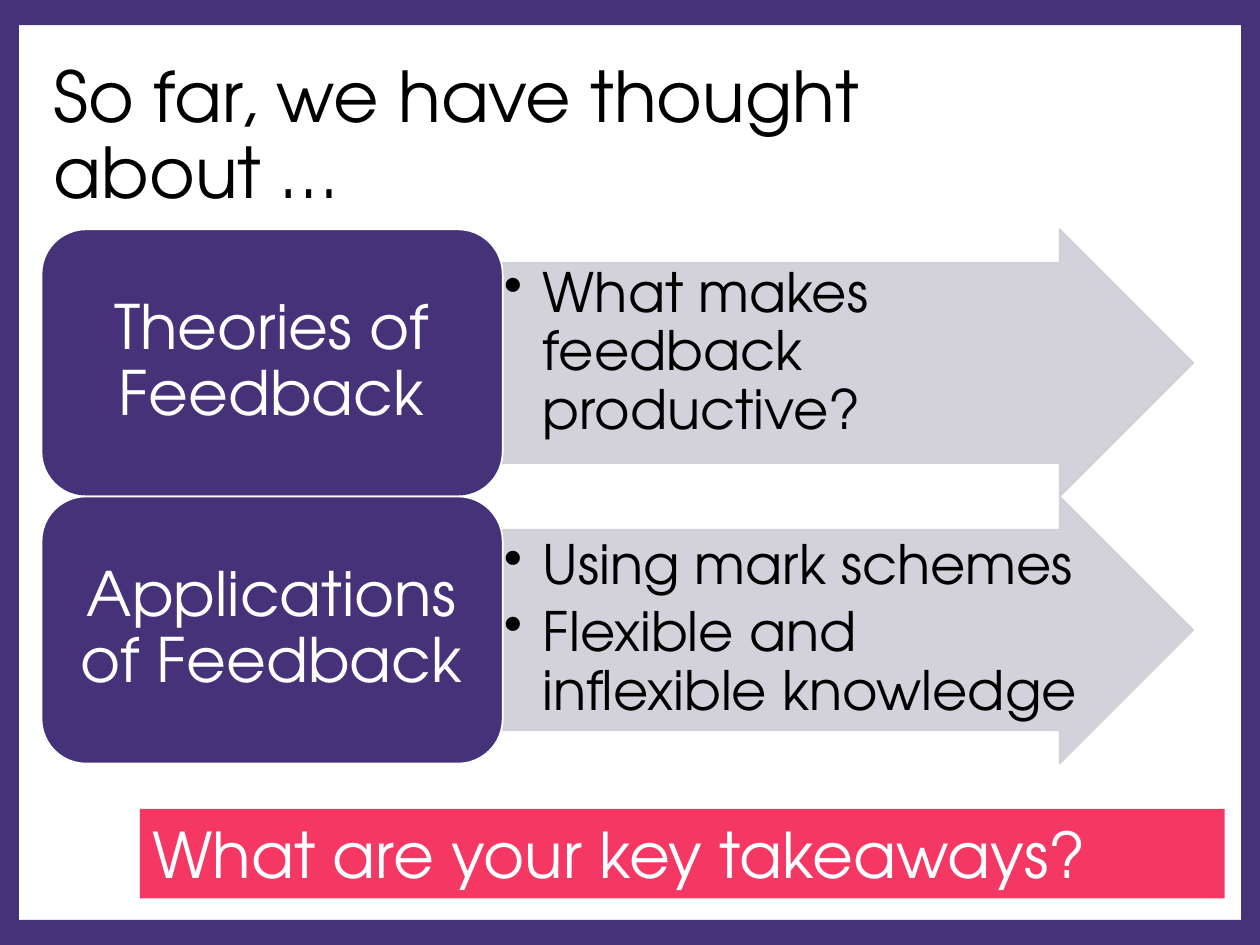
from dataclasses import dataclass
from typing import Any

from lxml import etree
from pptx import Presentation
from pptx.dml.color import RGBColor
from pptx.enum.shapes import MSO_SHAPE
from pptx.enum.text import MSO_ANCHOR, MSO_AUTO_SIZE, PP_ALIGN
from pptx.oxml.ns import qn
from pptx.util import Inches, Pt

RECT, ROUND, ARROW = MSO_SHAPE.RECTANGLE, MSO_SHAPE.ROUNDED_RECTANGLE, MSO_SHAPE.RIGHT_ARROW
TOP, MIDDLE = MSO_ANCHOR.TOP, MSO_ANCHOR.MIDDLE
LEFT, CENTER = PP_ALIGN.LEFT, PP_ALIGN.CENTER
GROW = MSO_AUTO_SIZE.SHAPE_TO_FIT_TEXT
PURPLE = RGBColor(0x46, 0x32, 0x78)
GREY = RGBColor(0xCF, 0xCE, 0xD6)
PINK = RGBColor(0xF5, 0x37, 0x64)
WHITE = RGBColor(0xFF, 0xFF, 0xFF)
BLACK = RGBColor(0, 0, 0)
COLS, ROWS = 100, 75


@dataclass
class Deck:
    """Draws styled elements on a slide, placed on a grid of 100 columns by 75 rows."""

    slide: Any
    width: int
    height: int
    font: str = "TeX Gyre Adventor"

    def place(self, col, row, wide, high):
        across, down = self.width / COLS, self.height / ROWS
        return [int(n) for n in (col * across, row * down, wide * across, high * down)]

    def shape(self, kind, area, fill, line=None, alpha=None):
        shape = self.slide.shapes.add_shape(kind, *self.place(*area))
        shape.shadow.inherit = False
        shape.fill.solid()
        shape.fill.fore_color.rgb = fill
        if line is None:
            shape.line.fill.background()
        else:
            shape.line.color.rgb = line
            shape.line.width = Pt(1)
        if alpha:
            for color in shape._element.spPr.iter(qn("a:srgbClr")):
                etree.SubElement(color, qn("a:alpha")).set("val", str(alpha * 1000))
        return shape

    def fill_text(self, frame, text, size, color, align=LEFT, anchor=TOP, pad=(0.1, 0.05),
                  lead=None, after=0, bullet=False):
        frame.word_wrap = True
        frame.vertical_anchor = anchor
        frame.margin_left = frame.margin_right = Inches(pad[0])
        frame.margin_top = frame.margin_bottom = Inches(pad[1])
        frame.text = text
        for para in frame.paragraphs:
            para.alignment = align
            para.line_spacing = lead
            para.space_after = Pt(after)
            if bullet:
                props = para._p.get_or_add_pPr()
                props.set("marL", str(Inches(0.31)))
                props.set("indent", str(-Inches(0.31)))
                etree.SubElement(props, qn("a:buChar")).set("char", "•")
            for run in para.runs:
                run.font.name = self.font
                run.font.size = Pt(size)
                run.font.color.rgb = color

    def text(self, area, text, size, color, **style):
        box = self.slide.shapes.add_textbox(*self.place(*area))
        self.fill_text(box.text_frame, text, size, color, lead=0.9, **style)

    def border(self):
        for col in (0, 98.5):
            self.shape(RECT, (col, 0, 1.5, ROWS), PURPLE)
        for row in (0, 73):
            self.shape(RECT, (0.5, row, 98.9, 2), PURPLE)

    def topic(self, row, name, points, anchor):
        arrow = self.shape(ARROW, (39.8, row, 54.9, 21.2), GREY, GREY, alpha=90)
        arrow.adjustments[0], arrow.adjustments[1] = 0.75, 0.5
        self.text((39.8, row + 2.65, 47, 15.9), points, 31, BLACK, anchor=anchor,
                  pad=(0.02, 0.02), after=4.65, bullet=True)
        self.shape(ROUND, (3.3, row, 36.6, 21.2), PURPLE, WHITE)
        self.text((4.3, row + 1.05, 34.5, 19.1), name, 35, WHITE, align=CENTER,
                  anchor=MIDDLE, pad=(0.15, 0.07))

    def banner(self, area, text):
        bar = self.shape(RECT, area, PINK)
        self.fill_text(bar.text_frame, text, 36, WHITE)
        bar.text_frame.auto_size = GROW


def main():
    show = Presentation()
    show.slide_width, show.slide_height = Inches(10), Inches(7.5)
    slide = show.slides.add_slide(show.slide_layouts[6])
    deck = Deck(slide, show.slide_width, show.slide_height)
    deck.border()
    deck.text((3.3, 3.7, 86.2, 14.5), "So far, we have thought \vabout …", 40, BLACK, anchor=MIDDLE)
    topics = [
        ("Theories of Feedback", "What makes feedback productive?", TOP),
        ("Applications of Feedback", "Using mark schemes\nFlexible and inflexible knowledge", MIDDLE),
    ]
    for i, (name, points, anchor) in enumerate(topics):
        deck.topic(18.2 + i * 21.2, name, points, anchor)
    deck.banner((11.1, 64.2, 86.1, 7.1), "What are your key takeaways?")
    show.save("out.pptx")


if __name__ == "__main__":
    main()
